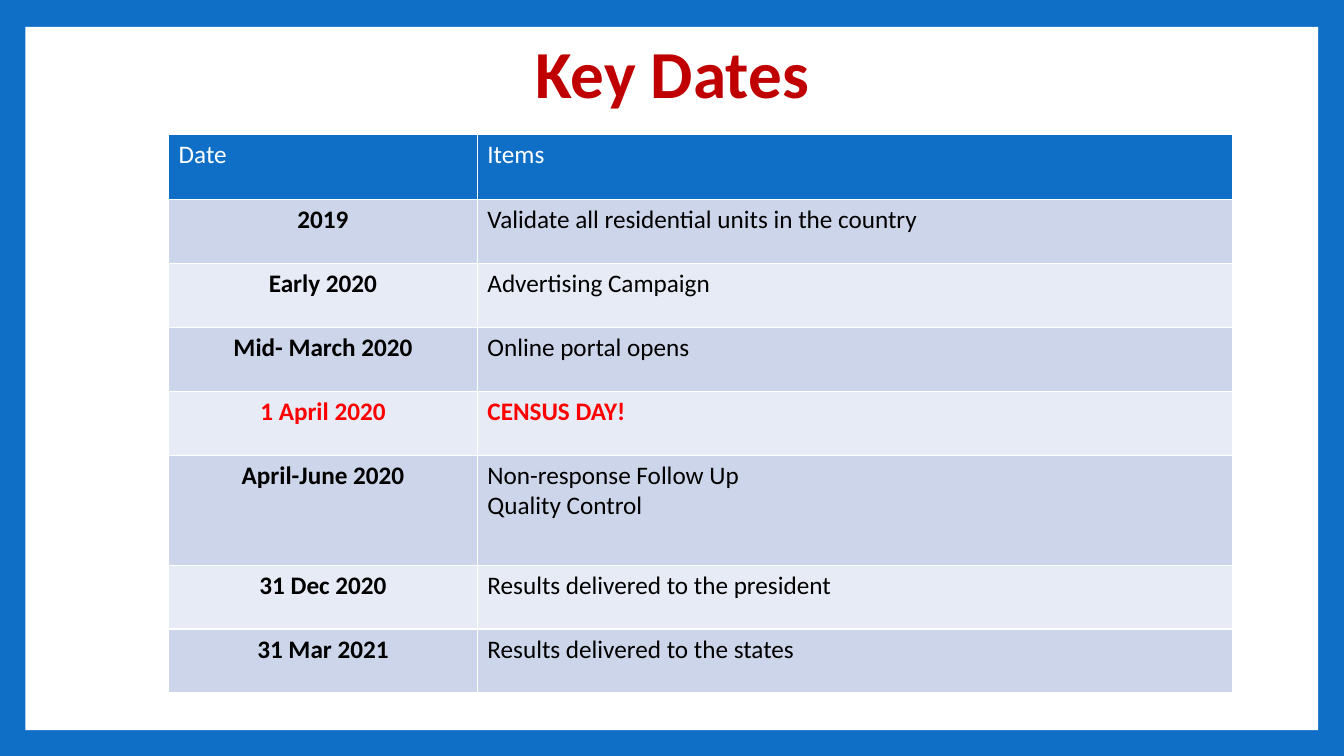
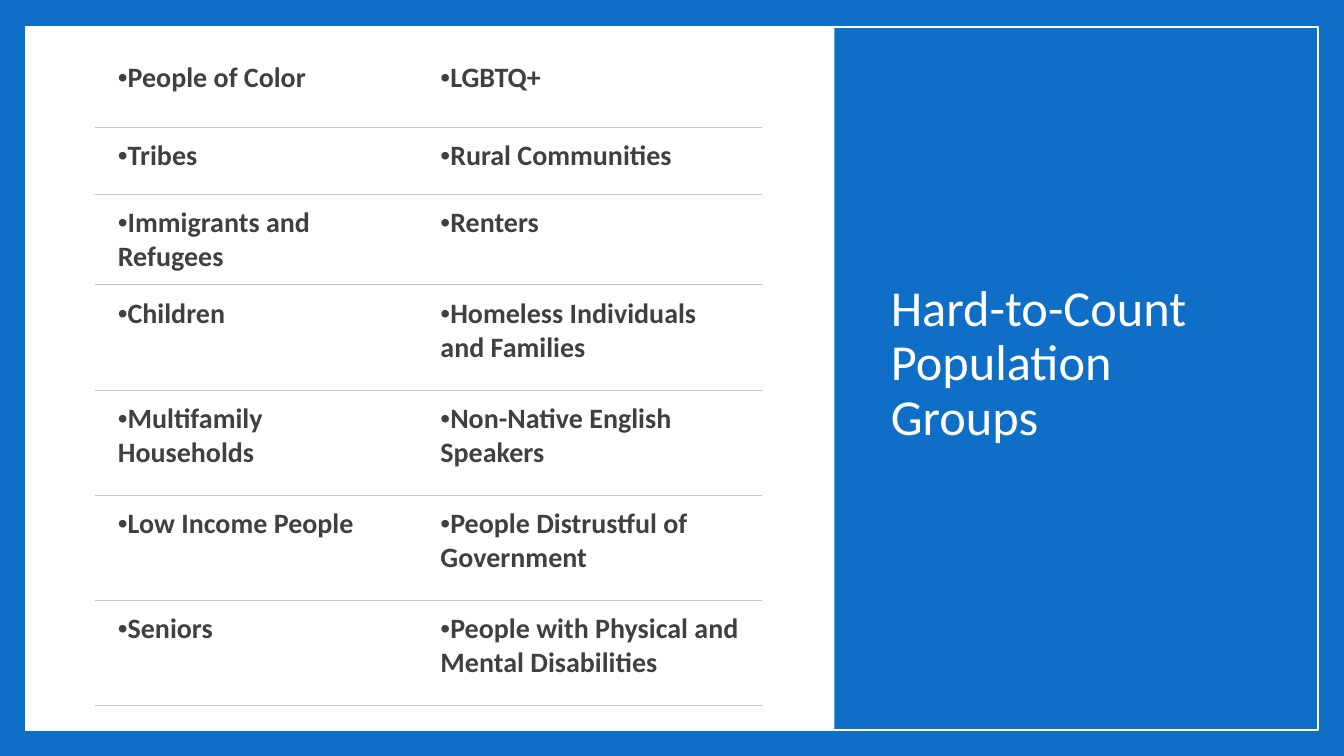
from lxml import etree
from pptx import Presentation
from pptx import util as u
from pptx.dml.color import RGBColor
from pptx.enum import shapes, text
from pptx.oxml.ns import qn

Cm, Pt = u.Cm, u.Pt
FONT, BULLET_FONT = "Calibri", "Arial"
COLORS = {
    "blue": "0F6FC6", "white": "FFFFFF", "title": "C00000", "black": "000000",
    "alert": "FF0000", "band_dark": "CCD5EA", "band_light": "E7EBF5",
    "rule": "C7C6C1", "body": "404040",
}
SLIDE = (33.87, 19.05)
CARD = (0.64, 0.68, 32.58, 17.72)
LEFT, CENTER = text.PP_ALIGN.LEFT, text.PP_ALIGN.CENTER

KEY_DATES = [
    ("Date", "Items"),
    ("2019", "Validate all residential units in the country"),
    ("Early 2020", "Advertising Campaign"),
    ("Mid- March 2020", "Online portal opens"),
    ("1 April 2020", "CENSUS DAY!"),
    ("April-June 2020", "Non-response Follow Up\nQuality Control"),
    ("31 Dec 2020", "Results delivered to the president"),
    ("31 Mar 2021", "Results delivered to the states"),
]
CENSUS_ROW = 4
GROUPS = [
    ("People of Color", "LGBTQ+"),
    ("Tribes", "Rural Communities"),
    ("Immigrants and Refugees", "Renters"),
    ("Children", "Homeless Individuals and Families"),
    ("Multifamily Households", "Non-Native English Speakers"),
    ("Low Income People", "People Distrustful of Government"),
    ("Seniors", "People with Physical and Mental Disabilities"),
]


def rgb(name):
    return RGBColor.from_string(COLORS[name])


def paint(fill, color):
    if color:
        fill.solid()
        fill.fore_color.rgb = rgb(color)
    else:
        fill.background()


def add_rect(s, box, fill=None, line=None):
    sp = s.shapes.add_shape(shapes.MSO_SHAPE.RECTANGLE, *map(Cm, box))
    sp.shadow.inherit = False
    paint(sp.fill, fill)
    paint(sp.line.fill, line)
    if line:
        sp.line.width = Pt(1)


def style_text(tf, size, color, bold=False, align=LEFT):
    for p in tf.paragraphs:
        p.alignment = align
        for r in p.runs:
            r.font.name, r.font.size, r.font.bold = FONT, Pt(size), bold
            r.font.color.rgb = rgb(color)


def add_title(s, box, words, size, color, bold=False, align=LEFT, spacing=1.0):
    tf = s.shapes.add_textbox(*map(Cm, box)).text_frame
    tf.word_wrap = True
    tf.vertical_anchor = text.MSO_ANCHOR.MIDDLE
    tf.text = words
    style_text(tf, size, color, bold, align)
    tf.paragraphs[0].line_spacing = spacing


def set_borders(cell, width, **sides):
    tc_pr = cell._tc.get_or_add_tcPr()
    for i, side in enumerate("LRTB"):
        ln = etree.Element(qn("a:ln" + side), w=str(Pt(width)))
        color = sides.get(side)
        if color:
            fill = etree.SubElement(ln, qn("a:solidFill"))
            etree.SubElement(fill, qn("a:srgbClr"), val=COLORS[color])
        else:
            etree.SubElement(ln, qn("a:noFill"))
        tc_pr.insert(i, ln)


def add_bullet(p):
    p_pr = p._p.get_or_add_pPr()
    p_pr.set("marL", "0")
    p_pr.set("indent", "0")
    etree.SubElement(p_pr, qn("a:buFont"), typeface=BULLET_FONT)
    etree.SubElement(p_pr, qn("a:buChar"), char="•")


def add_table(s, left, top, widths, heights, rows, style_cell):
    box = (left, top, sum(widths), sum(heights))
    table = s.shapes.add_table(len(rows), len(widths), *map(Cm, box)).table
    for col, width in zip(table.columns, widths):
        col.width = Cm(width)
    for row, height in zip(table.rows, heights):
        row.height = Cm(height)
    for i, row in enumerate(rows):
        for j, words in enumerate(row):
            cell = table.cell(i, j)
            cell.text_frame.text = words
            style_cell(cell, i, j)


def style_date_cell(cell, i, j):
    if i == 0:
        fill, color, bold, align = "blue", "white", False, LEFT
    else:
        fill = "band_dark" if i % 2 else "band_light"
        color = "alert" if i == CENSUS_ROW else "black"
        bold = j == 0 or i == CENSUS_ROW
        align = CENTER if j == 0 else LEFT
    paint(cell.fill, fill)
    set_borders(cell, 1, **dict.fromkeys("LRTB", "white"))
    style_text(cell.text_frame, 18, color, bold, align)


def style_group_cell(cell, i, j):
    paint(cell.fill, None)
    set_borders(cell, 0.75, T="rule" if i else None, B="rule")
    cell.margin_left, cell.margin_right = Cm(0.58), Cm(0.43)
    cell.margin_top = cell.margin_bottom = Cm(0.29)
    style_text(cell.text_frame, 20, "body", True)
    add_bullet(cell.text_frame.paragraphs[0])


def new_slide(prs):
    s = prs.slides.add_slide(prs.slide_layouts[6])
    paint(s.background.fill, "blue")
    add_rect(s, CARD, fill="white")
    return s


def key_dates_slide(prs):
    s = new_slide(prs)
    heights = [1.64] + [1.61] * 4 + [2.77] + [1.61] * 2
    add_table(s, 4.25, 3.39, (7.78, 19.03), heights, KEY_DATES, style_date_cell)
    add_title(s, (5.51, 0.22, 22.86, 3.18), "Key Dates", 48, "title", True, CENTER)


def side_panel(s, box):
    left, top, width, height = box
    add_rect(s, box, fill="blue")
    add_title(s, (left + 1.17, top + 1.69, width - 2.91, height - 4.05),
              "Hard-to-Count Population Groups", 36, "white", spacing=0.9)


def groups_slide(prs):
    s = new_slide(prs)
    panel_left = 21.03
    side_panel(s, (panel_left, 0, SLIDE[0] - panel_left, SLIDE[1]))
    add_rect(s, CARD, line="white")
    heights = [1.96, 1.69, 2.29] + [2.65] * 4
    add_table(s, 2.39, 1.24, (8.13, 8.69), heights, GROUPS, style_group_cell)


def main():
    prs = Presentation()
    prs.slide_width, prs.slide_height = map(Cm, SLIDE)
    key_dates_slide(prs)
    groups_slide(prs)
    prs.save("out.pptx")


if __name__ == "__main__":
    main()
